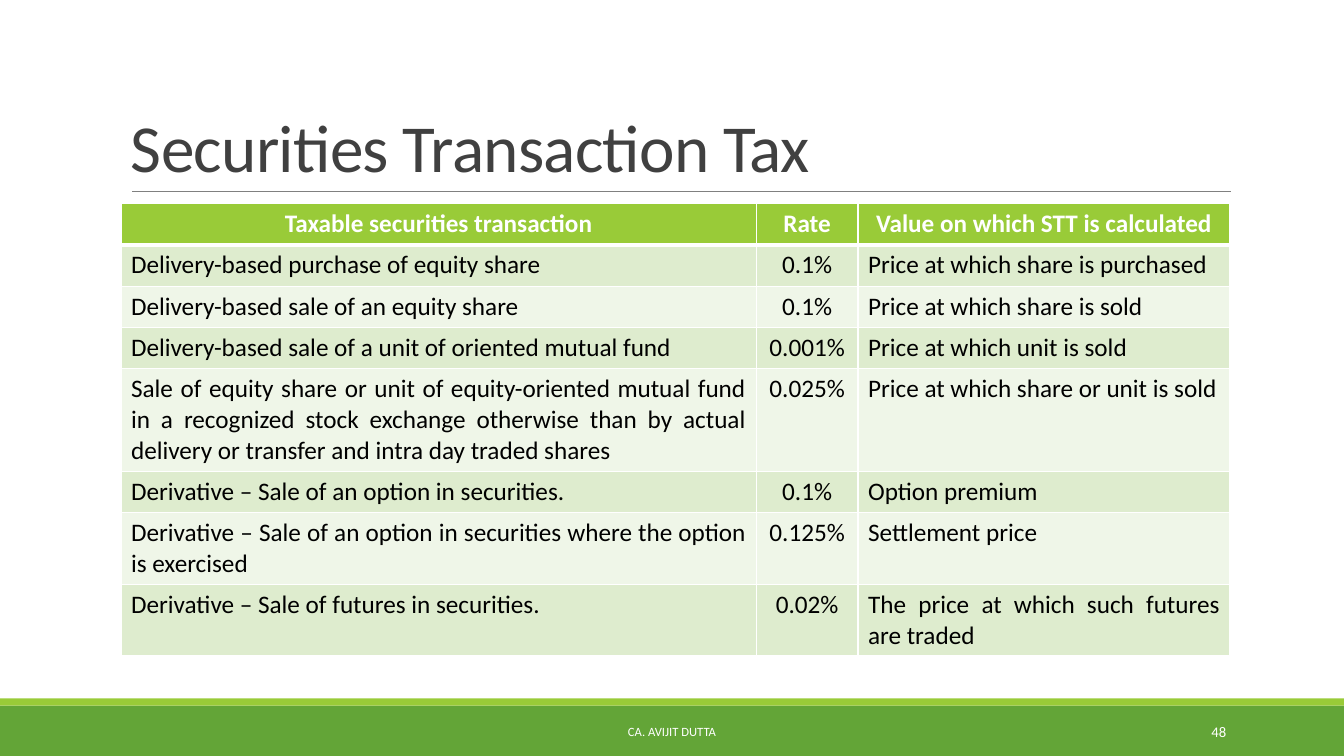
from dataclasses import dataclass

from lxml.etree import SubElement
from pptx import Presentation
from pptx.dml.color import RGBColor
from pptx.enum.shapes import MSO_CONNECTOR, MSO_SHAPE
from pptx.enum.text import MSO_ANCHOR, PP_ALIGN
from pptx.oxml.ns import qn
from pptx.slide import Slide
from pptx.table import _Cell as Cell
from pptx.text.text import TextFrame
from pptx.util import Inches, Pt

WHITE = RGBColor(0xFF, 0xFF, 0xFF)
BLACK = RGBColor(0x00, 0x00, 0x00)
DARK = RGBColor(0x40, 0x40, 0x40)
GRAY = RGBColor(0x80, 0x80, 0x80)
GREEN = RGBColor(0x63, 0xA5, 0x37)
LIME = RGBColor(0x99, 0xCB, 0x38)
BANDS = (RGBColor(0xEF, 0xF6, 0xE8), RGBColor(0xDE, 0xEC, 0xCE))

WIDE = 13.33
LINE = 0.41
COLS = (6.3, 1.01, 3.69)
ALIGNS = (PP_ALIGN.JUSTIFY, PP_ALIGN.CENTER, PP_ALIGN.JUSTIFY)


@dataclass(frozen=True)
class Bar:
    top: float
    height: float
    color: RGBColor


@dataclass(frozen=True)
class Label:
    text: str
    left: float
    top: float
    width: float
    height: float
    size: float
    color: RGBColor
    align: PP_ALIGN
    anchor: MSO_ANCHOR
    gap: float = 1.0
    track: float = 0.0


@dataclass(frozen=True)
class Entry:
    deal: str
    rate: str
    value: str


BARS = (Bar(7, 0.5, GREEN), Bar(6.93, 0.07, LIME))

LABELS = (
    Label("Securities Transaction Tax", 1.2, 0.31, 11, 1.59, 48, DARK,
          PP_ALIGN.LEFT, MSO_ANCHOR.BOTTOM, gap=0.85, track=-0.5),
    Label("CA. AVIJIT DUTTA", 4.03, 7.06, 5.27, 0.4, 9, WHITE,
          PP_ALIGN.CENTER, MSO_ANCHOR.MIDDLE),
    Label("48", 10.83, 7.06, 1.43, 0.4, 10.5, WHITE,
          PP_ALIGN.RIGHT, MSO_ANCHOR.MIDDLE),
)

ENTRIES = (
    Entry("Taxable securities transaction", "Rate", "Value on which STT is calculated"),
    Entry("Delivery-based purchase of equity share", "0.1%",
          "Price at which share is purchased"),
    Entry("Delivery-based sale of an equity share", "0.1%", "Price at which share is sold"),
    Entry("Delivery-based sale of a unit of oriented mutual fund", "0.001%",
          "Price at which unit is sold"),
    Entry("Sale of equity share or unit of equity-oriented mutual fund in a recognized "
          "stock exchange otherwise than by actual delivery or transfer and intra day "
          "traded shares", "0.025%", "Price at which share or unit is sold"),
    Entry("Derivative – Sale of an option in securities.", "0.1%", "Option premium"),
    Entry("Derivative – Sale of an option in securities where the option is exercised",
          "0.125%", "Settlement price"),
    Entry("Derivative – Sale of futures in securities.", "0.02%",
          "The price at which such futures are traded"),
)


def write(frame: TextFrame, text: str, *, size: float, color: RGBColor,
          align: PP_ALIGN, bold: bool = False, gap: float = 1.0,
          track: float = 0.0) -> None:
    para = frame.paragraphs[0]
    para.alignment = align
    para.line_spacing = gap
    run = para.add_run()
    run.text = text
    run.font.name = "Calibri"
    run.font.size = Pt(size)
    run.font.bold = bold
    run.font.color.rgb = color
    if track:
        run.font._element.set("spc", str(round(track * 100)))


def draw_bar(slide: Slide, bar: Bar) -> None:
    shape = slide.shapes.add_shape(MSO_SHAPE.RECTANGLE, 0, Inches(bar.top),
                                   Inches(WIDE), Inches(bar.height))
    shape.shadow.inherit = False
    shape.fill.solid()
    shape.fill.fore_color.rgb = bar.color
    shape.line.fill.background()


def draw_rule(slide: Slide) -> None:
    rule = slide.shapes.add_connector(MSO_CONNECTOR.STRAIGHT, Inches(1.31),
                                      Inches(1.9), Inches(12.21), Inches(1.9))
    rule.line.color.rgb = GRAY
    rule.line.width = Pt(0.5)
    SubElement(rule._element.spPr, qn("a:effectLst"))


def draw_label(slide: Slide, label: Label) -> None:
    box = slide.shapes.add_textbox(Inches(label.left), Inches(label.top),
                                   Inches(label.width), Inches(label.height))
    frame = box.text_frame
    frame.word_wrap = True
    frame.vertical_anchor = label.anchor
    write(frame, label.text, size=label.size, color=label.color,
          align=label.align, gap=label.gap, track=label.track)


def style_cell(cell: Cell, fill: RGBColor, top: float, base: float) -> None:
    props = cell._tc.get_or_add_tcPr()
    for side, width in (("L", 1), ("R", 1), ("T", top), ("B", base)):
        edge = SubElement(props, qn(f"a:ln{side}"), w=str(Pt(width)))
        solid = SubElement(edge, qn("a:solidFill"))
        SubElement(solid, qn("a:srgbClr"), val=str(WHITE))
    cell.fill.solid()
    cell.fill.fore_color.rgb = fill


def draw_table(slide: Slide) -> None:
    holder = slide.shapes.add_table(len(ENTRIES), len(COLS), Inches(1.2), Inches(2.02),
                                    Inches(sum(COLS)), Inches(LINE * len(ENTRIES)))
    table = holder.table
    for col, width in zip(table.columns, COLS):
        col.width = Inches(width)
    for row, entry in enumerate(ENTRIES):
        table.rows[row].height = Inches(LINE)
        head = row == 0
        fill = LIME if head else BANDS[row % 2]
        for col, text in enumerate((entry.deal, entry.rate, entry.value)):
            cell = table.cell(row, col)
            style_cell(cell, fill, top=3 if row == 1 else 1, base=3 if head else 1)
            write(cell.text_frame, text, size=18, bold=head,
                  color=WHITE if head else BLACK,
                  align=PP_ALIGN.CENTER if head else ALIGNS[col])
    holder.height = Inches(4.43)


def main() -> None:
    deck = Presentation()
    deck.slide_width = Inches(WIDE)
    deck.slide_height = Inches(7.5)
    slide = deck.slides.add_slide(deck.slide_layouts[6])
    for bar in BARS:
        draw_bar(slide, bar)
    draw_rule(slide)
    draw_table(slide)
    for label in LABELS:
        draw_label(slide, label)
    deck.save("out.pptx")


if __name__ == "__main__":
    main()
